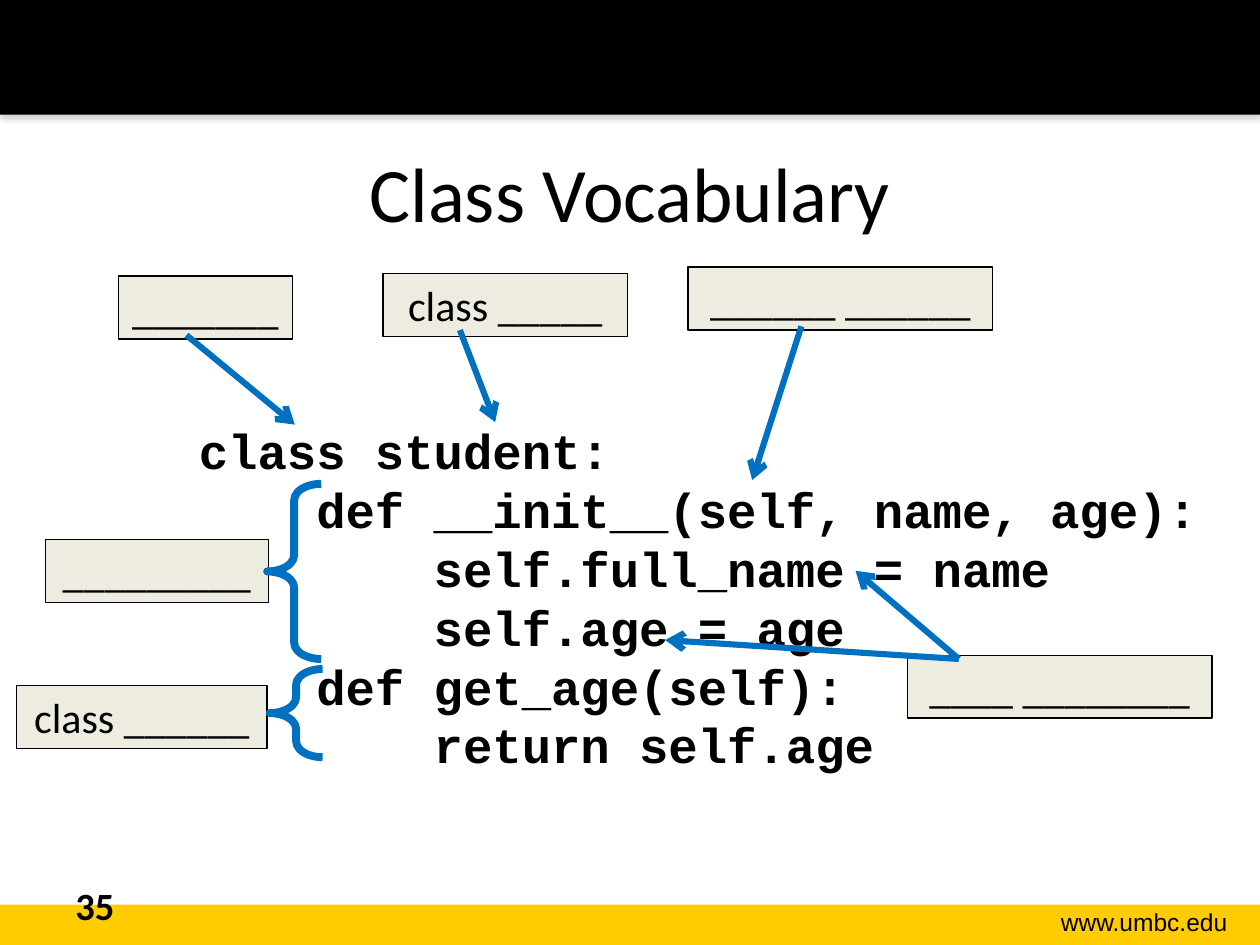
from lxml import etree
from pptx import Presentation
from pptx import util as u
from pptx.dml.color import RGBColor
from pptx.enum import shapes, text
from pptx.oxml import parse_xml
from pptx.oxml.ns import qn

BLACK = RGBColor(0x00, 0x00, 0x00)
GOLD = RGBColor(0xFF, 0xCC, 0x00)
CREAM = RGBColor(0xEE, 0xEC, 0xE1)
BLUE = RGBColor(0x00, 0x70, 0xC0)

HEADER_SHADOW = (
    '<a:effectLst xmlns:a="http://schemas.openxmlformats.org/drawingml/2006/main">'
    '<a:outerShdw blurRad="39370" dist="22860" dir="5400000" rotWithShape="0">'
    '<a:srgbClr val="808080"><a:alpha val="35000"/></a:srgbClr>'
    '</a:outerShdw></a:effectLst>'
)

LEFT, CENTER, RIGHT = text.PP_ALIGN.LEFT, text.PP_ALIGN.CENTER, text.PP_ALIGN.RIGHT
TOP, MIDDLE = text.MSO_ANCHOR.TOP, text.MSO_ANCHOR.MIDDLE


class SlideBuilder:
    def __init__(self, slide):
        self.s = slide
        self.font = "Calibri"
        self.label_size = 24
        self.label_height = 0.5
        self.arrow_width = 3.5
        self.brace_width = 4.5

    def add_lines(self, sp, lines, size, font=None, bold=False, align=LEFT, anchor=TOP):
        tf = sp.text_frame
        tf.word_wrap = True
        tf.vertical_anchor = anchor
        for i, line in enumerate(lines):
            p = tf.add_paragraph() if i else tf.paragraphs[0]
            p.alignment = align
            r = p.add_run()
            r.text = line
            r.font.name = font or self.font
            r.font.size = u.Pt(size)
            r.font.bold = bold
            r.font.color.rgb = BLACK

    def textbox(self, box, lines, size, **style):
        sp = self.s.shapes.add_textbox(*map(u.Inches, box))
        self.add_lines(sp, lines, size, **style)

    def shape(self, kind, box):
        sp = self.s.shapes.add_shape(kind, *map(u.Inches, box))
        sp.shadow.inherit = False
        return sp

    def band(self, box, color):
        sp = self.shape(shapes.MSO_SHAPE.RECTANGLE, box)
        sp.fill.solid()
        sp.fill.fore_color.rgb = color
        sp.line.fill.background()
        return sp

    def header(self, box):
        props = self.band(box, BLACK).element.spPr
        props.replace(props.find(qn("a:effectLst")), parse_xml(HEADER_SHADOW))

    def label(self, left, top, width, words):
        sp = self.band((left, top, width, self.label_height), CREAM)
        sp.line.color.rgb = BLACK
        sp.line.width = u.Pt(0.75)
        self.add_lines(sp, [words], self.label_size, align=CENTER)

    def arrow(self, start, end):
        c = self.s.shapes.add_connector(
            shapes.MSO_CONNECTOR.STRAIGHT, *map(u.Inches, start + end))
        c.line.color.rgb = BLUE
        c.line.width = u.Pt(self.arrow_width)
        props = c.element.spPr
        etree.SubElement(props.find(qn("a:ln")), qn("a:tailEnd"), type="arrow")
        etree.SubElement(props, qn("a:effectLst"))

    def brace(self, box):
        sp = self.shape(shapes.MSO_SHAPE.LEFT_BRACE, box)
        sp.adjustments[0] = 0.3
        sp.fill.background()
        sp.line.color.rgb = BLUE
        sp.line.width = u.Pt(self.brace_width)


CODE = [
    "class student:",
    "    def __init__(self, name, age):",
    "        self.full_name = name",
    "        self.age = age",
    "    def get_age(self):",
    "        return self.age",
]
LABELS = [
    (0.94, 2.19, 1.38, "_______"),
    (3.04, 2.17, 1.94, "class _____"),
    (5.46, 2.12, 2.42, "______ ______"),
    (0.36, 4.28, 1.77, "_________"),
    (7.2, 5.2, 2.42, "____ ________"),
    (0.13, 5.44, 1.99, "class ______"),
]
MEMBER_START = (7.61, 5.23)
ARROWS = [
    ((1.48, 2.66), (2.34, 3.37)),
    ((3.65, 2.62), (3.93, 3.35)),
    ((6.36, 2.59), (5.97, 3.81)),
    (MEMBER_START, (6.79, 4.53)),
    (MEMBER_START, (5.28, 5.08)),
]
BRACES = [(2.12, 3.84, 0.43, 1.39), (2.14, 5.31, 0.42, 0.7)]


def main():
    prs = Presentation()
    prs.slide_width, prs.slide_height = u.Inches(10), u.Inches(7.5)
    b = SlideBuilder(prs.slides.add_slide(prs.slide_layouts[6]))

    b.band((0, 7.18, 10, 0.32), GOLD)
    b.header((0, 0, 10, 0.91))
    b.textbox((7.85, 7.15, 1.99, 0.34), ["www.umbc.edu"], 14, font="Arial", align=RIGHT)
    b.textbox((0.5, 0.9, 9, 1.25), ["Class Vocabulary"], 44, align=CENTER, anchor=MIDDLE)
    b.textbox((0.5, 6.95, 2.33, 0.4), ["35"], 22, bold=True)
    b.textbox((1.48, 3.29, 8.21, 2.93), CODE, 28, font="Courier New", bold=True)

    for label in LABELS:
        b.label(*label)
    for start, end in ARROWS:
        b.arrow(start, end)
    for box in BRACES:
        b.brace(box)

    prs.save("out.pptx")


if __name__ == "__main__":
    main()
